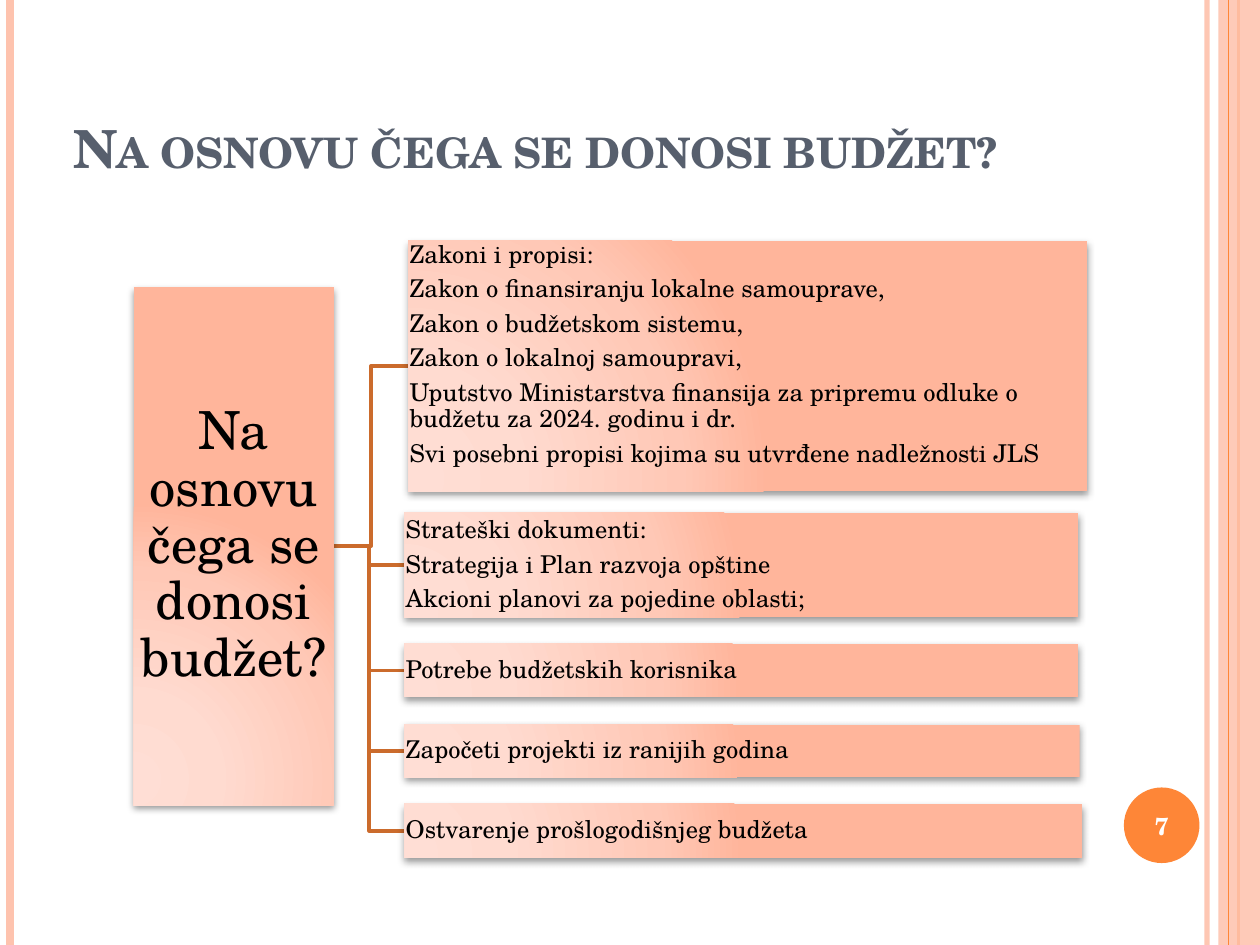
from lxml import etree
from pptx import Presentation
from pptx.dml.color import RGBColor
from pptx.enum.shapes import MSO_CONNECTOR, MSO_SHAPE
from pptx.enum.text import MSO_ANCHOR, MSO_AUTO_SIZE, PP_ALIGN
from pptx.oxml import parse_xml
from pptx.oxml.ns import qn
from pptx.util import Inches, Pt

FONT = "TeX Gyre Schola"
NS = 'xmlns:a="http://schemas.openxmlformats.org/drawingml/2006/main"'
COLORS = {"title": "575F6D", "pale": "FEC3AE", "orange": "FE8637",
          "link": "CB6B2C", "text": "000000", "white": "FFFFFF"}
STOPS = [(0, "FFDED5"), (30, "FFDBD0"), (75, "FFC8B6"), (100, "FFB59B")]

QUESTION = "Na osnovu čega se donosi budžet?"
ROOT = (1.06, 2.28, 1.59, 4.11)
# left, top, width, height, anchor, lines of text
BOXES = [
    (3.24, 1.91, 5.39, 1.99, MSO_ANCHOR.TOP, [
        "Zakoni i propisi:",
        "Zakon o finansiranju lokalne samouprave,",
        "Zakon o budžetskom sistemu,",
        "Zakon o lokalnoj samoupravi,",
        "Uputstvo Ministarstva finansija za pripremu odluke o budžetu za 2024. godinu i dr.",
        "Svi posebni propisi kojima su utvrđene nadležnosti JLS"]),
    (3.21, 4.07, 5.35, 0.83, MSO_ANCHOR.MIDDLE, [
        "Strateški dokumenti:",
        "Strategija i Plan razvoja opštine",
        "Akcioni planovi za pojedine oblasti;"]),
    (3.21, 5.11, 5.35, 0.42, MSO_ANCHOR.MIDDLE, ["Potrebe budžetskih korisnika"]),
    (3.21, 5.75, 5.36, 0.42, MSO_ANCHOR.MIDDLE, ["Započeti projekti iz ranijih godina"]),
    (3.21, 6.38, 5.38, 0.43, MSO_ANCHOR.MIDDLE, ["Ostvarenje prošlogodišnjeg budžeta"]),
]
# x, width in points, colour, opacity
RULES = [(9.58, 3, "pale", 93), (0.08, 4.5, "pale", 100),
         (9.83, 1.5, "orange", 100), (9.75, 0.75, "orange", 100)]


def rgb(name):
    return RGBColor.from_string(COLORS[name])


def fade(part, alpha):
    color = part._element.spPr.find(".//" + qn("a:srgbClr"))
    etree.SubElement(color, qn("a:alpha")).set("val", str(alpha * 1000))


def add_rule(x, width, color, alpha):
    rule = slide.shapes.add_connector(
        MSO_CONNECTOR.STRAIGHT, Inches(x), 0, Inches(x), Inches(7.5))
    rule.line.color.rgb = rgb(color)
    rule.line.width = Pt(width)
    if alpha < 100:
        fade(rule, alpha)
    etree.SubElement(rule._element.spPr, qn("a:effectLst"))


def add_plain(kind, place, color=None):
    shape = slide.shapes.add_shape(kind, *map(Inches, place))
    shape.shadow.inherit = False
    shape.line.fill.background()
    if color:
        shape.fill.solid()
        shape.fill.fore_color.rgb = rgb(color)
    return shape


def set_text(shape, lines, size, color, inset, align=PP_ALIGN.LEFT,
             anchor=MSO_ANCHOR.MIDDLE, bold=False):
    frame = shape.text_frame
    frame.text = "\n".join(lines)
    frame.word_wrap = True
    frame.auto_size = MSO_AUTO_SIZE.NONE
    frame.vertical_anchor = anchor
    frame.margin_left = frame.margin_right = Inches(inset)
    frame.margin_top = frame.margin_bottom = Inches(inset)
    for para in frame.paragraphs:
        para.alignment = align
        font = para.runs[0].font
        font.name, font.size, font.bold = FONT, Pt(size), bold
        font.color.rgb = rgb(color)


def add_box(place, lines, size, inset, **style):
    box = add_plain(MSO_SHAPE.RECTANGLE, place)
    set_text(box, lines, size, "text", inset, **style)
    for para in box.text_frame.paragraphs:
        para.line_spacing = 0.9
        para.space_after = Pt(4.6)
    # Radial gradient and soft shadow
    stops = "".join(f'<a:gs pos="{pos * 1000}"><a:srgbClr val="{color}"/></a:gs>'
                    for pos, color in STOPS)
    props = box._element.spPr
    props.find(qn("a:prstGeom")).addnext(parse_xml(
        f'<a:gradFill {NS} rotWithShape="1"><a:gsLst>{stops}</a:gsLst><a:path path="circle">'
        '<a:fillToRect l="5000" t="100000" r="120000" b="10000"/></a:path></a:gradFill>'))
    props.find(qn("a:effectLst")).append(parse_xml(
        f'<a:outerShdw {NS} blurRad="{Pt(4)}" dist="{Pt(2)}" dir="5400000" rotWithShape="0">'
        '<a:srgbClr val="000000"><a:alpha val="40000"/></a:srgbClr></a:outerShdw>'))


def add_link(start, end):
    (x1, y1), (x2, y2) = start, end
    mid = (x1 + x2) / 2
    path = slide.shapes.build_freeform(Inches(x1), Inches(y1))
    path.add_line_segments([(Inches(x), Inches(y)) for x, y in
                            ((mid, y1), (mid, y2), (x2, y2))], close=False)
    link = path.convert_to_shape()
    link.shadow.inherit = False
    link.fill.background()
    link.line.color.rgb = rgb("link")
    link.line.width = Pt(2)


deck = Presentation()
deck.slide_width, deck.slide_height = Inches(10), Inches(7.5)
slide = deck.slides.add_slide(deck.slide_layouts[5])

# Side decoration and page number
for rule in RULES[:3]:
    add_rule(*rule)
band = add_plain(MSO_SHAPE.RECTANGLE, (9.67, 0, 0.33, 7.5), "pale")
fade(band, 87)
add_rule(*RULES[3])
badge = add_plain(MSO_SHAPE.OVAL, (8.92, 6.25, 0.6, 0.6), "orange")
set_text(badge, ["7"], 14, "white", 0, align=PP_ALIGN.CENTER, bold=True)

# Title
title = slide.shapes.title
title.left, title.top, title.width, title.height = map(Inches, (0.48, 0.54, 9, 0.93))
set_text(title, [QUESTION], 30, "title", 0.1, anchor=MSO_ANCHOR.BOTTOM, bold=True)
title.text_frame.margin_top = title.text_frame.margin_bottom = Inches(0.05)
title.text_frame.paragraphs[0].runs[0].font._element.set("cap", "small")

# Links from the question to each answer, then the boxes
left, top, width, height = ROOT
for x, y, w, h, *_ in reversed(BOXES):
    add_link((left + width, top + height / 2), (x, y + h / 2))
add_box(ROOT, [QUESTION], 30, 0.02, align=PP_ALIGN.CENTER)
for *place, anchor, lines in BOXES:
    add_box(place, lines, 14, 0.01, anchor=anchor)

deck.save("out.pptx")
